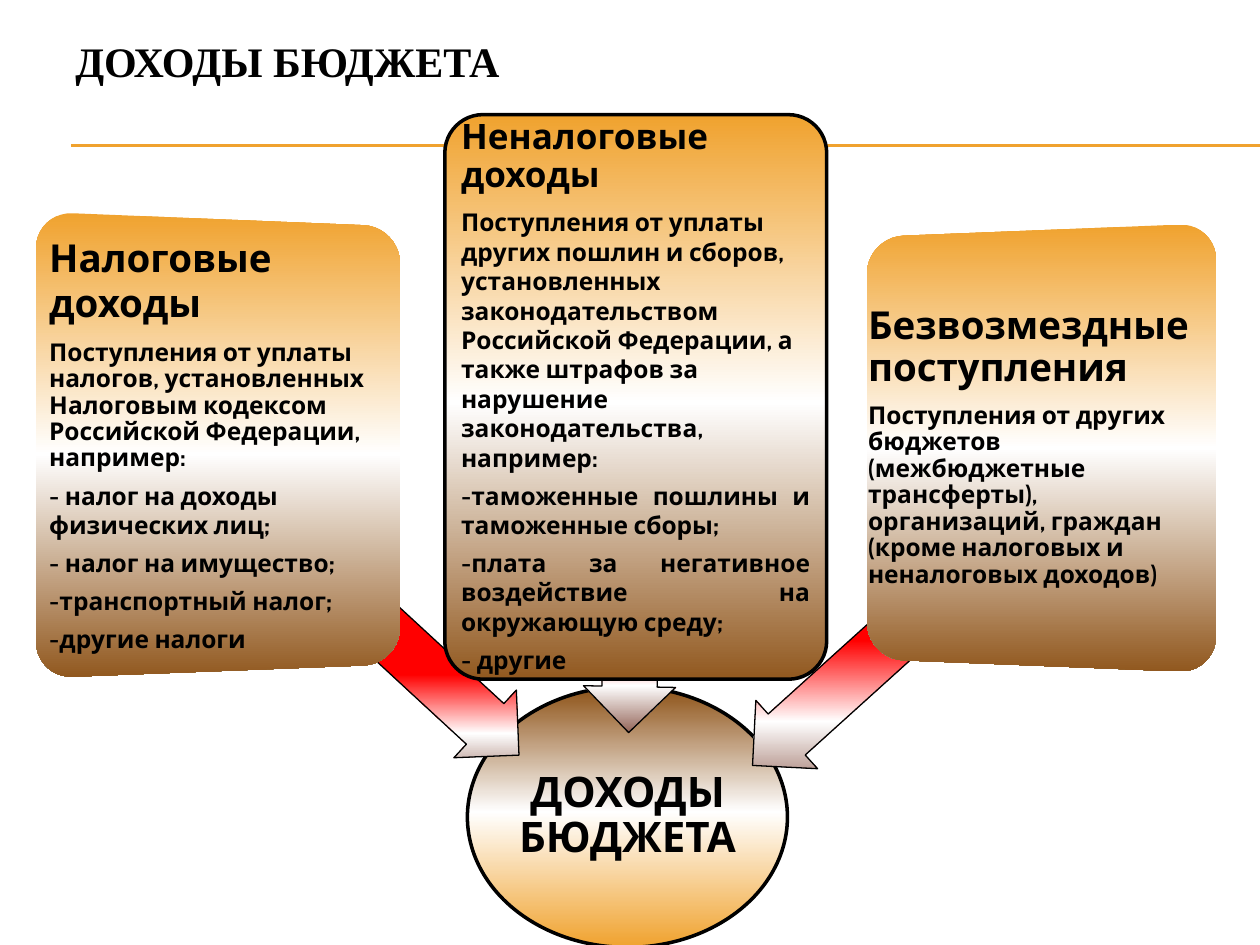
"""Build the budget revenue slide with three source panels feeding one total."""
from dataclasses import dataclass

import lxml.etree
import pptx
import pptx.dml.color
import pptx.enum.shapes
import pptx.enum.text
import pptx.oxml
import pptx.oxml.ns
import pptx.util

Pt = pptx.util.Pt
SHAPE = pptx.enum.shapes.MSO_SHAPE
ALIGN = pptx.enum.text.PP_ALIGN
ORANGE, BROWN, WHITE, RED, MAUVE, BLACK = (
    "F0A22E", "91581F", "FFFFFF", "FF0000", "926255", "000000")
Box = tuple[float, float, float, float]
Stops = list[tuple[int, str]]


@dataclass
class Para:
    text: str
    size: float = 14
    spacing: float = 1.0
    align: ALIGN = ALIGN.LEFT
    font: str = "Cabin"


@dataclass
class Arrow:
    box: Box
    rotation: float
    red: int
    white: int


@dataclass
class Panel:
    arrow: Arrow
    outline: Box | list[tuple[float, float]]
    middle: int
    text_box: Box
    inset: float
    paras: list[Para]


def color(value: str) -> pptx.dml.color.RGBColor:
    return pptx.dml.color.RGBColor.from_string(value)


def set_format(obj, values: dict) -> None:
    for name, value in values.items():
        setattr(obj, name, value)


def set_gradient(sp, stops: Stops) -> None:
    sp.fill.gradient()
    sp.fill.gradient_angle = 270
    grad = sp._element.spPr.find(pptx.oxml.ns.qn("a:gradFill"))
    grad.set("rotWithShape", "0")
    gs_list = grad.find(pptx.oxml.ns.qn("a:gsLst"))
    for gs in list(gs_list):
        gs_list.remove(gs)
    for pos, value in stops:
        gs = lxml.etree.SubElement(gs_list, pptx.oxml.ns.qn("a:gs"), pos=str(pos * 1000))
        lxml.etree.SubElement(gs, pptx.oxml.ns.qn("a:srgbClr"), val=value)


def style(sp, stops: Stops, width: float) -> None:
    sp.shadow.inherit = False
    set_gradient(sp, stops)
    if width:
        sp.line.color.rgb = color(BLACK)
        sp.line.width = Pt(width)
    else:
        sp.line.fill.background()


def add_shape(s, kind: SHAPE, box: Box, stops: Stops, width: float):
    sp = s.shapes.add_shape(kind, *map(Pt, box))
    style(sp, stops, width)
    return sp


def add_text(s, box: Box, paras: list[Para], inset: float) -> None:
    tf = s.shapes.add_textbox(*map(Pt, box)).text_frame
    set_format(tf, {"word_wrap": True,
                    "vertical_anchor": pptx.enum.text.MSO_ANCHOR.MIDDLE})
    set_format(tf, {f"margin_{side}": Pt(inset) for side in ("left", "right", "top", "bottom")})
    for i, para in enumerate(paras):
        p = tf.add_paragraph() if i else tf.paragraphs[0]
        set_format(p, {"alignment": para.align, "line_spacing": para.spacing,
                       "space_after": Pt(para.size * 0.35)})
        r = p.add_run()
        r.text = para.text
        set_format(r.font, {"name": para.font, "size": Pt(para.size), "bold": True})
        r.font.color.rgb = color(BLACK)


def add_rule(s, y: float) -> None:
    sp = s.shapes.add_connector(pptx.enum.shapes.MSO_CONNECTOR.STRAIGHT,
                                Pt(40.5), Pt(y), Pt(720), Pt(y))
    sp.line.color.rgb = color(ORANGE)
    sp.line.width = Pt(0.75)
    lxml.etree.SubElement(sp._element.spPr, pptx.oxml.ns.qn("a:effectLst"))


def rounded(corners: list[tuple[float, float]], radius: float = 21,
            steps: int = 10) -> list[tuple[int, int]]:
    points = []
    for i, (x, y) in enumerate(corners):
        ends = []
        for nx, ny in (corners[i - 1], corners[(i + 1) % len(corners)]):
            k = radius / ((nx - x) ** 2 + (ny - y) ** 2) ** 0.5
            ends.append((x + (nx - x) * k, y + (ny - y) * k))
        (ax, ay), (bx, by) = ends
        for step in range(steps + 1):
            t = step / steps
            u, bend = 1 - t, 1.66 * t * (1 - t)
            a, b = u * u * (1 + 0.34 * t), t * t * (1 + 0.34 * u)
            c = 1 - a - b if bend else 0
            points.append((Pt(a * ax + c * x + b * bx), Pt(a * ay + c * y + b * by)))
    return points


def add_panel(s, panel: Panel) -> None:
    arrow = panel.arrow
    sp = add_shape(s, SHAPE.LEFT_ARROW, arrow.box,
                   [(arrow.red, RED), (arrow.white, WHITE), (100, MAUVE)], 0.75)
    sp.rotation = arrow.rotation
    sp.adjustments[0] = 0.6
    stops = [(0, ORANGE), (panel.middle, WHITE), (100, BROWN)]
    if isinstance(panel.outline, list):
        points = rounded(panel.outline)
        builder = s.shapes.build_freeform(*points[0], scale=1.0)
        builder.add_line_segments(points[1:], close=True)
        style(builder.convert_to_shape(), stops, 0)
    else:
        sp = add_shape(s, SHAPE.ROUNDED_RECTANGLE, panel.outline, stops, 2)
        sp.adjustments[0] = 0.1
    add_text(s, panel.text_box, panel.paras, panel.inset)


PANELS = [
    Panel(Arrow((107.3, 331.2, 218.2, 52.6), 222.7, 65, 83),
          [(20.6, 121), (228.6, 129.5), (228.6, 379.5), (20.6, 387.5)], 52,
          (24.5, 131.8, 207.4, 244.8), 3.6,
          [Para("Налоговые доходы", 22, 0.98),
           Para("Поступления от уплаты налогов, установленных Налоговым кодексом "
                "Российской Федерации, например:", spacing=0.9),
           Para("- налог на доходы физических лиц;"),
           Para("- налог на имущество;"),
           Para("-транспортный налог;"),
           Para("-другие налоги")]),
    Panel(Arrow((247.7, 278.6, 227.5, 52.6), 271.1, 75, 88),
          (254.2, 65.5, 218.2, 322.6), 51, (260.6, 72, 205.2, 309.6), 2.9,
          [Para("Неналоговые доходы", 20, 0.9),
           Para("Поступления от уплаты других пошлин и сборов, установленных "
                "законодательством Российской Федерации, а также штрафов за "
                "нарушение законодательства, например:"),
           Para("-таможенные пошлины и таможенные сборы;", align=ALIGN.JUSTIFY),
           Para("-плата за негативное воздействие на окружающую среду;",
                align=ALIGN.JUSTIFY),
           Para("- другие", align=ALIGN.JUSTIFY)]),
    Panel(Arrow((401.8, 337.7, 218.9, 52.6), 317.9, 51, 76),
          [(495.4, 135.5), (694.9, 127.5), (694.9, 384.5), (495.4, 376.5)], 50,
          (492.5, 137.5, 198.7, 236.2), 3.6,
          [Para("Безвозмездные поступления", 22, 0.9),
           Para("Поступления от других бюджетов (межбюджетные трансферты), "
                "организаций, граждан (кроме налоговых и неналоговых доходов)",
                spacing=0.9)]),
]


def main() -> None:
    prs = pptx.Presentation()
    set_format(prs, {"slide_width": Pt(720), "slide_height": Pt(540)})
    s = prs.slides.add_slide(prs.slide_layouts[6])
    for y in (82.8, 83.5):
        add_rule(s, y)
    add_shape(s, SHAPE.OVAL, (267.1, 392.4, 182.9, 149),
              [(2, BROWN), (48, WHITE), (100, ORANGE)], 2)
    add_text(s, (293.8, 414, 129.6, 105.1),
             [Para("ДОХОДЫ БЮДЖЕТА", 24, 0.9, ALIGN.CENTER)], 1.4)
    for panel in PANELS:
        add_panel(s, panel)
    add_text(s, (36, 5.8, 648, 57.6),
             [Para("ДОХОДЫ БЮДЖЕТА", 24, font="Times New Roman")], 7.2)
    prs.save("out.pptx")


if __name__ == "__main__":
    main()
